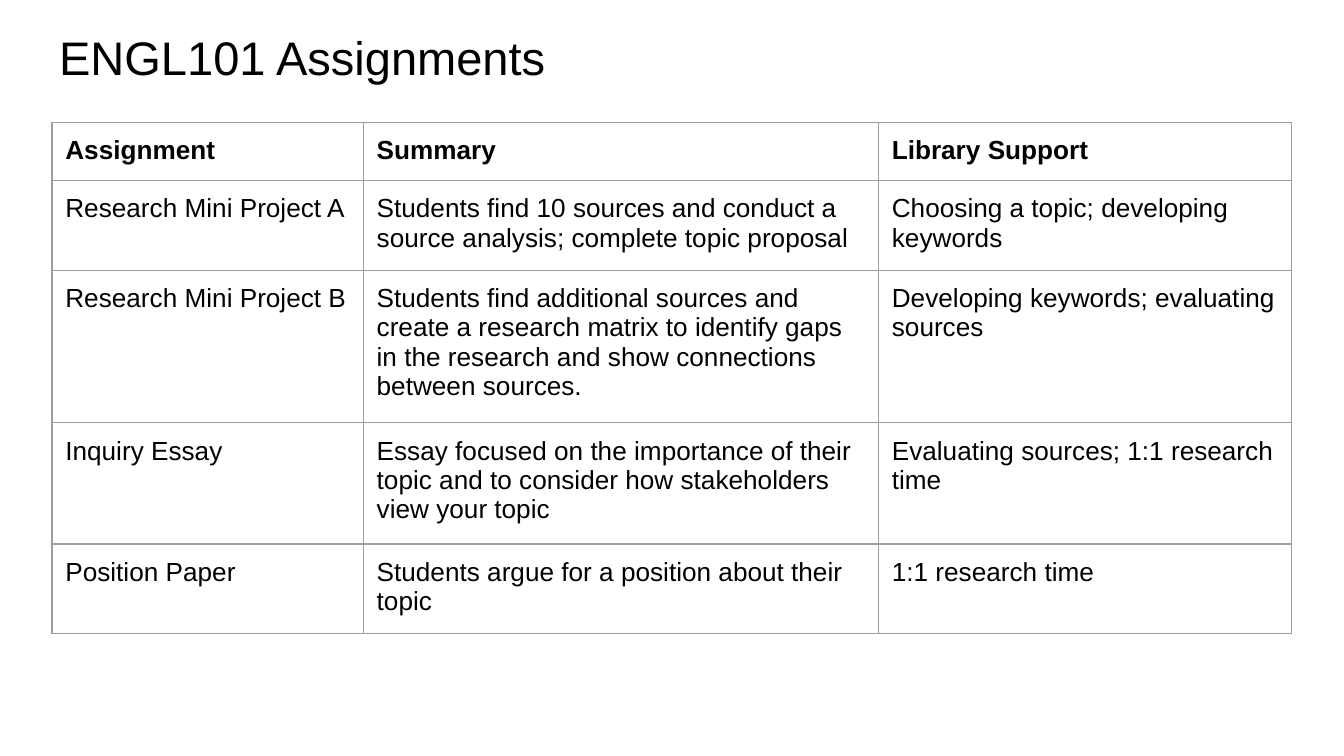
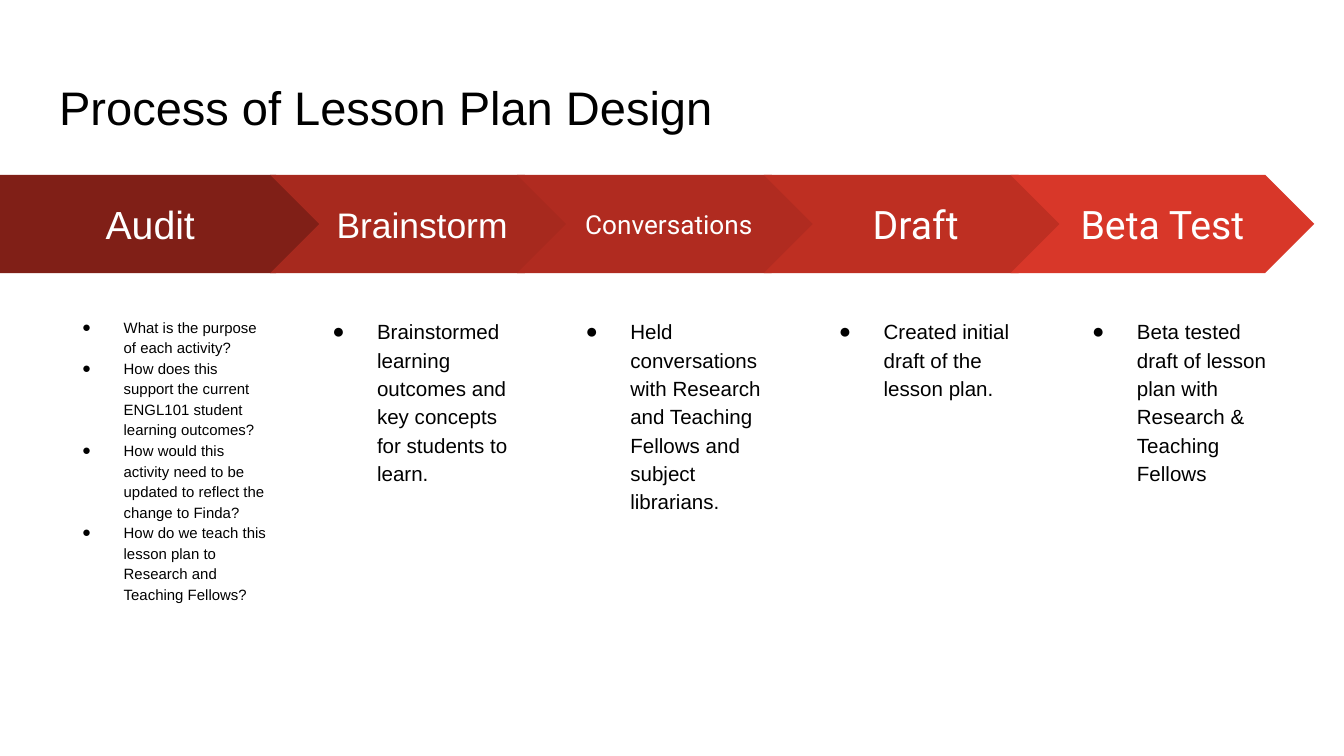
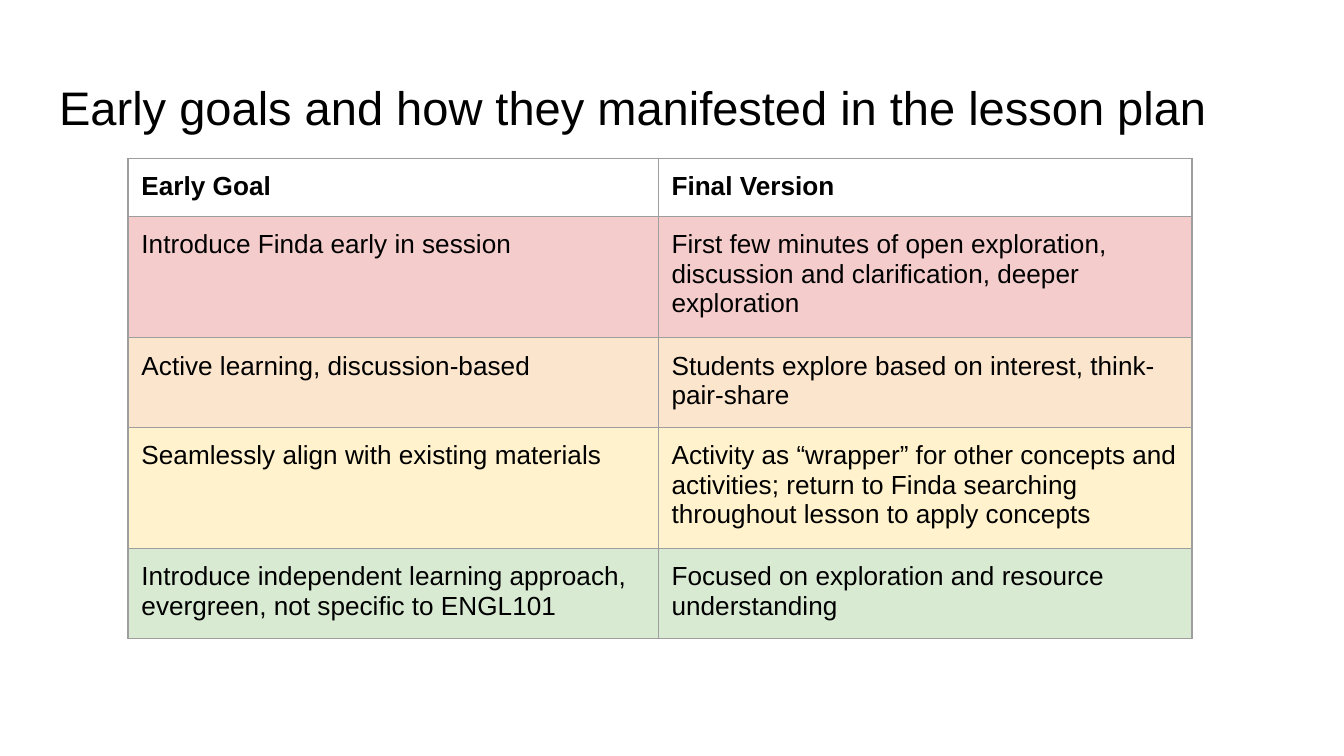
from dataclasses import dataclass

from lxml.etree import SubElement
from pptx import Presentation
from pptx.dml.color import RGBColor
from pptx.enum.shapes import MSO_SHAPE
from pptx.enum.text import MSO_ANCHOR, PP_ALIGN
from pptx.oxml import parse_xml
from pptx.oxml.ns import nsdecls, qn
from pptx.util import Pt


@dataclass(frozen=True)
class Theme:
    font: str = "Arial"
    step_font: str = "Roboto"
    ink: str = "000000"
    paper: str = "FFFFFF"
    rule: str = "9E9E9E"
    rule_width: float = 0.75
    title_size: float = 25.2
    table_size: float = 14
    inset: float = 7.2


THEME = Theme()
SLIDE_SIZE = (720, 405)
TITLE_LEFT, TITLE_WIDTH, TITLE_HEIGHT = 24.6, 671, 45
HIGH_TITLE_TOP, LOW_TITLE_TOP = 8, 35

ASSIGNMENTS = {
    "title": "ENGL101 Assignments",
    "origin": (27.8, 65.6),
    "column_widths": (166.8, 276, 221.3),
    "row_heights": (30, 30, 30, 30, 30),
    "row_fills": (None,) * 5,
    "rows": [
        ("Assignment", "Summary", "Library Support"),
        ("Research Mini Project A",
         "Students find 10 sources and conduct a source analysis; complete topic proposal",
         "Choosing a topic; developing keywords"),
        ("Research Mini Project B",
         "Students find additional sources and create a research matrix to identify gaps "
         "in the research and show connections between sources.",
         "Developing keywords; evaluating sources"),
        ("Inquiry Essay",
         "Essay focused on the importance of their topic and to consider how stakeholders "
         "view your topic",
         "Evaluating sources; 1:1 research time"),
        ("Position Paper", "Students argue for a position about their topic",
         "1:1 research time"),
    ],
}

PROCESS_TITLE = "Process of Lesson Plan Design"
# label, label font, label size, fill, detail size, details
STEPS = [
    ("Audit", THEME.font, 21, "801F17", 8, [
        "What is the purpose of each activity?",
        "How does this support the current ENGL101 student learning outcomes?",
        "How would this activity need to be updated to reflect the change to Finda?",
        "How do we teach this lesson plan to Research and Teaching Fellows?"]),
    ("Brainstorm", THEME.font, 19, "A7291E", 11, [
        "Brainstormed learning outcomes and key concepts for students to learn."]),
    ("Conversations", THEME.step_font, 14, "B02B20", 11, [
        "Held conversations with Research and Teaching Fellows and subject librarians."]),
    ("Draft", THEME.step_font, 21, "BE2F22", 11, [
        "Created initial draft of the lesson plan."]),
    ("Beta Test", THEME.step_font, 21, "D83729", 11, [
        "Beta tested draft of lesson plan with Research & Teaching Fellows"]),
]
BAND_TOP, BAND_HEIGHT = 93.7, 52.6
FIRST_WIDTH, CHEVRON_WIDTH = 174.2, 162.7
CHEVRON_LEFT, CHEVRON_PITCH = 144.8, 132.2
DETAIL_LEFT, DETAIL_PITCH = 23.2, 135.7
DETAIL_TOP, DETAIL_WIDTH, DETAIL_HEIGHT = 162, 128, 185

GOALS = {
    "title": "Early goals and how they manifested in the lesson plan",
    "origin": (68.6, 84.9),
    "column_widths": (284, 286),
    "row_heights": (30, 30, 30, 30, 47.5),
    "row_fills": ("FFFFFF", "F4CCCC", "FCE5CD", "FFF2CC", "D9EAD3"),
    "rows": [
        ("Early Goal", "Final Version"),
        ("Introduce Finda early in session",
         "First few minutes of open exploration, discussion and clarification, "
         "deeper exploration"),
        ("Active learning, discussion-based",
         "Students explore based on interest, think-pair-share"),
        ("Seamlessly align with existing materials",
         "Activity as “wrapper” for other concepts and activities; return to Finda "
         "searching throughout lesson to apply concepts"),
        ("Introduce independent learning approach, evergreen, not specific to ENGL101",
         "Focused on exploration and resource understanding"),
    ],
}


def points(*lengths):
    return [Pt(length) for length in lengths]


def add_bullet(paragraph, size):
    properties = paragraph._p.get_or_add_pPr()
    properties.set("marL", str(Pt(36)))
    properties.set("indent", str(-Pt(18 + size * 0.54)))
    color = SubElement(properties, qn("a:buClr"))
    SubElement(color, qn("a:srgbClr"), val=THEME.ink)
    SubElement(properties, qn("a:buFont"), typeface=THEME.font)
    SubElement(properties, qn("a:buChar"), char="●")


def write(frame, *texts, size, font=THEME.font, color=THEME.ink, bold=False,
          align=PP_ALIGN.LEFT, anchor=MSO_ANCHOR.TOP, spacing=1.0, bullets=False):
    """Fill a text frame with one paragraph for each text."""
    frame.word_wrap = True
    frame.vertical_anchor = anchor
    frame.margin_left = frame.margin_right = Pt(THEME.inset)
    frame.margin_top = frame.margin_bottom = Pt(THEME.inset)
    for index, text in enumerate(texts):
        paragraph = frame.add_paragraph() if index else frame.paragraphs[0]
        paragraph.alignment = align
        if bullets:
            add_bullet(paragraph, size)
        paragraph.line_spacing = spacing
        paragraph.space_before = paragraph.space_after = Pt(0)
        run = paragraph.add_run()
        run.text = text
        run.font.name, run.font.size, run.font.bold = font, Pt(size), bold
        run.font.color.rgb = RGBColor.from_string(color)


def add_titled_slide(deck, title, top):
    slide = deck.slides.add_slide(deck.slide_layouts[6])
    slide.background.fill.solid()
    slide.background.fill.fore_color.rgb = RGBColor.from_string(THEME.paper)
    box = slide.shapes.add_textbox(*points(TITLE_LEFT, top, TITLE_WIDTH, TITLE_HEIGHT))
    write(box.text_frame, title, size=THEME.title_size)
    return slide


def add_borders(cell):
    properties = cell._tc.get_or_add_tcPr()
    for position, side in enumerate(("lnL", "lnR", "lnT", "lnB")):
        properties.insert(position, parse_xml(
            f'<a:{side} {nsdecls("a")} w="{Pt(THEME.rule_width)}"><a:solidFill>'
            f'<a:srgbClr val="{THEME.rule}"/></a:solidFill></a:{side}>'))


def add_grid(slide, content):
    rows, widths, heights = (content[key] for key in ("rows", "column_widths", "row_heights"))
    table = slide.shapes.add_table(
        len(rows), len(widths),
        *points(*content["origin"], sum(widths), sum(heights))).table
    table.first_row = table.horz_banding = False
    for column, width in zip(table.columns, widths):
        column.width = Pt(width)
    for r, (texts, height, fill) in enumerate(zip(rows, heights, content["row_fills"])):
        table.rows[r].height = Pt(height)
        for c, text in enumerate(texts):
            cell = table.cell(r, c)
            cell.margin_left = cell.margin_right = Pt(THEME.inset)
            cell.margin_top = cell.margin_bottom = Pt(THEME.inset)
            if fill:
                cell.fill.solid()
                cell.fill.fore_color.rgb = RGBColor.from_string(fill)
            else:
                cell.fill.background()
            add_borders(cell)
            write(cell.text_frame, text, size=THEME.table_size, bold=r == 0)


def add_step(slide, index, label, font, label_size, fill, detail_size, details):
    if index == 0:
        kind, left, width = MSO_SHAPE.PENTAGON, 0, FIRST_WIDTH
    else:
        kind, width = MSO_SHAPE.CHEVRON, CHEVRON_WIDTH
        left = CHEVRON_LEFT + (index - 1) * CHEVRON_PITCH
    arrow = slide.shapes.add_shape(kind, *points(left, BAND_TOP, width, BAND_HEIGHT))
    arrow.shadow.inherit = False
    arrow.fill.solid()
    arrow.fill.fore_color.rgb = RGBColor.from_string(fill)
    arrow.line.fill.background()
    write(arrow.text_frame, label, size=label_size, font=font, color=THEME.paper,
          align=PP_ALIGN.CENTER, anchor=MSO_ANCHOR.MIDDLE)
    box = slide.shapes.add_textbox(*points(
        DETAIL_LEFT + index * DETAIL_PITCH, DETAIL_TOP, DETAIL_WIDTH, DETAIL_HEIGHT))
    write(box.text_frame, *details, size=detail_size, spacing=1.15, bullets=True)


def main():
    deck = Presentation()
    deck.slide_width, deck.slide_height = points(*SLIDE_SIZE)
    add_grid(add_titled_slide(deck, ASSIGNMENTS["title"], HIGH_TITLE_TOP), ASSIGNMENTS)
    process = add_titled_slide(deck, PROCESS_TITLE, LOW_TITLE_TOP)
    for index, step in enumerate(STEPS):
        add_step(process, index, *step)
    add_grid(add_titled_slide(deck, GOALS["title"], LOW_TITLE_TOP), GOALS)
    deck.save("out.pptx")


if __name__ == "__main__":
    main()
